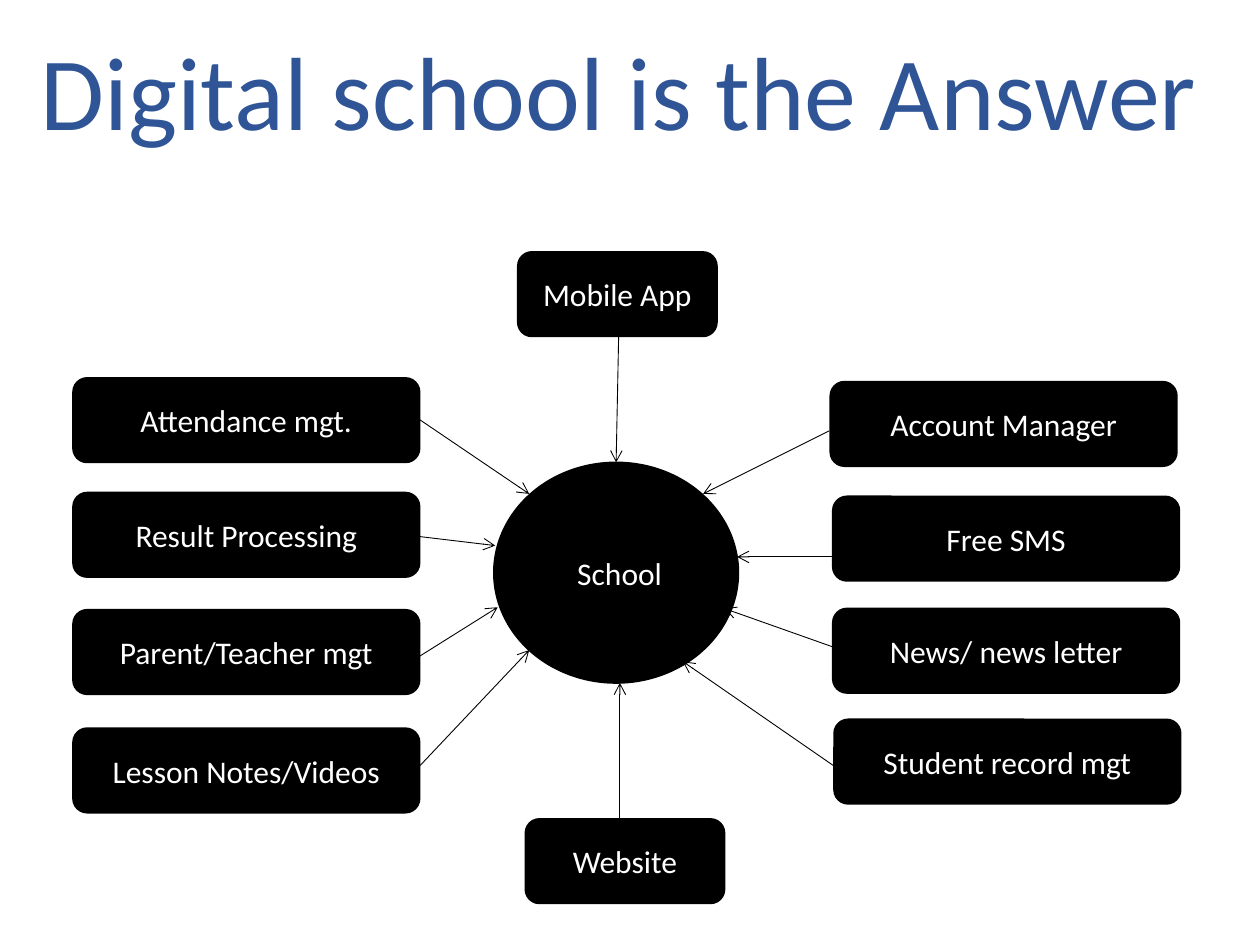
from dataclasses import dataclass

from lxml import etree
from pptx import Presentation
from pptx.dml.color import RGBColor
from pptx.enum.shapes import MSO_CONNECTOR, MSO_SHAPE
from pptx.enum.text import MSO_ANCHOR, PP_ALIGN
from pptx.oxml.ns import qn
from pptx.util import Inches, Pt

ELLIPSE = MSO_SHAPE.OVAL
ROUNDED = MSO_SHAPE.ROUNDED_RECTANGLE
STRAIGHT = MSO_CONNECTOR.STRAIGHT
CENTER = PP_ALIGN.CENTER
MIDDLE = MSO_ANCHOR.MIDDLE

COLORS = {"title": "2F5597", "node": "000000", "text": "FFFFFF"}
FONT = "Calibri"
WIDTH, HEIGHT = Inches(10), Inches(7.5)
COLS, ROWS = 100, 75
BOX_H = 6.7
WIDE, NARROW = 27.5, 15.8
LEFT = 5.8


@dataclass(frozen=True)
class Node:
    text: str
    col: float
    row: float
    cols: float = WIDE
    rows: float = BOX_H
    shape: int = ROUNDED


@dataclass(frozen=True)
class Arrow:
    col: float
    row: float
    to_col: float
    to_row: float


NODES = [
    Node(" School", 39.2, 36.7, 19.4, 17.5, ELLIPSE),
    Node("Mobile App", 41.1, 20, NARROW),
    Node("Website", 41.7, 65, NARROW),
    Node("Attendance mgt.", LEFT, 30),
    Node("Result Processing", LEFT, 39.1),
    Node("Parent/Teacher mgt", LEFT, 48.4),
    Node("Lesson Notes/Videos", LEFT, 57.8),
    Node("Account Manager", 65.9, 30.3),
    Node("Free SMS", 66.1, 39.4),
    Node("News/ news letter", 66.1, 48.3),
    Node("Student record mgt", 66.2, 57.1),
]

ARROWS = [
    Arrow(49.2, 65.8, 49.2, 54.2),
    Arrow(49.1, 26.7, 48.9, 36.7),
    Arrow(65.8, 34.2, 55.8, 39.2),
    Arrow(68.5, 44.2, 58.5, 44.2),
    Arrow(67.1, 51.7, 57.5, 48.3),
    Arrow(67.5, 61.7, 54.2, 52.5),
    Arrow(33.3, 33.3, 42, 39.2),
    Arrow(32.6, 42.5, 39.3, 43.3),
    Arrow(32.8, 52.4, 39.5, 48.2),
    Arrow(33.3, 60.8, 42, 51.6),
]


def x(col: float) -> int:
    return round(WIDTH * col / COLS)


def y(row: float) -> int:
    return round(HEIGHT * row / ROWS)


def color(name: str) -> RGBColor:
    return RGBColor.from_string(COLORS[name])


def write(sp, text: str, size: float, color_name: str):
    tf = sp.text_frame
    tf.word_wrap = True
    tf.vertical_anchor = MIDDLE
    p = tf.paragraphs[0]
    p.text = text
    p.alignment = CENTER
    p.font.name = FONT
    p.font.size = Pt(size)
    p.font.color.rgb = color(color_name)
    return p


def draw_title(s, text: str) -> None:
    sp = s.shapes.add_textbox(x(2.1), y(2.7), x(94), y(10))
    p = write(sp, text, 59.4, "title")
    p.line_spacing = 0.9


def draw_node(s, node: Node) -> None:
    sp = s.shapes.add_shape(
        node.shape, x(node.col), y(node.row), x(node.cols), y(node.rows)
    )
    sp.shadow.inherit = False
    sp.fill.solid()
    sp.fill.fore_color.rgb = color("node")
    sp.line.color.rgb = color("node")
    sp.line.width = Pt(1)
    write(sp, node.text, 18, "text")


def draw_arrow(s, arrow: Arrow) -> None:
    sp = s.shapes.add_connector(
        STRAIGHT, x(arrow.col), y(arrow.row), x(arrow.to_col), y(arrow.to_row)
    )
    sp.line.color.rgb = color("node")
    sp.line.width = Pt(0.5)
    etree.SubElement(sp.line._get_or_add_ln(), qn("a:tailEnd"), type="arrow")
    etree.SubElement(sp._element.spPr, qn("a:effectLst"))


def main() -> None:
    prs = Presentation()
    prs.slide_width, prs.slide_height = WIDTH, HEIGHT
    s = prs.slides.add_slide(prs.slide_layouts[6])
    draw_title(s, "Digital school is the Answer")
    for node in NODES:
        draw_node(s, node)
    for arrow in ARROWS:
        draw_arrow(s, arrow)
    prs.save("out.pptx")


if __name__ == "__main__":
    main()
